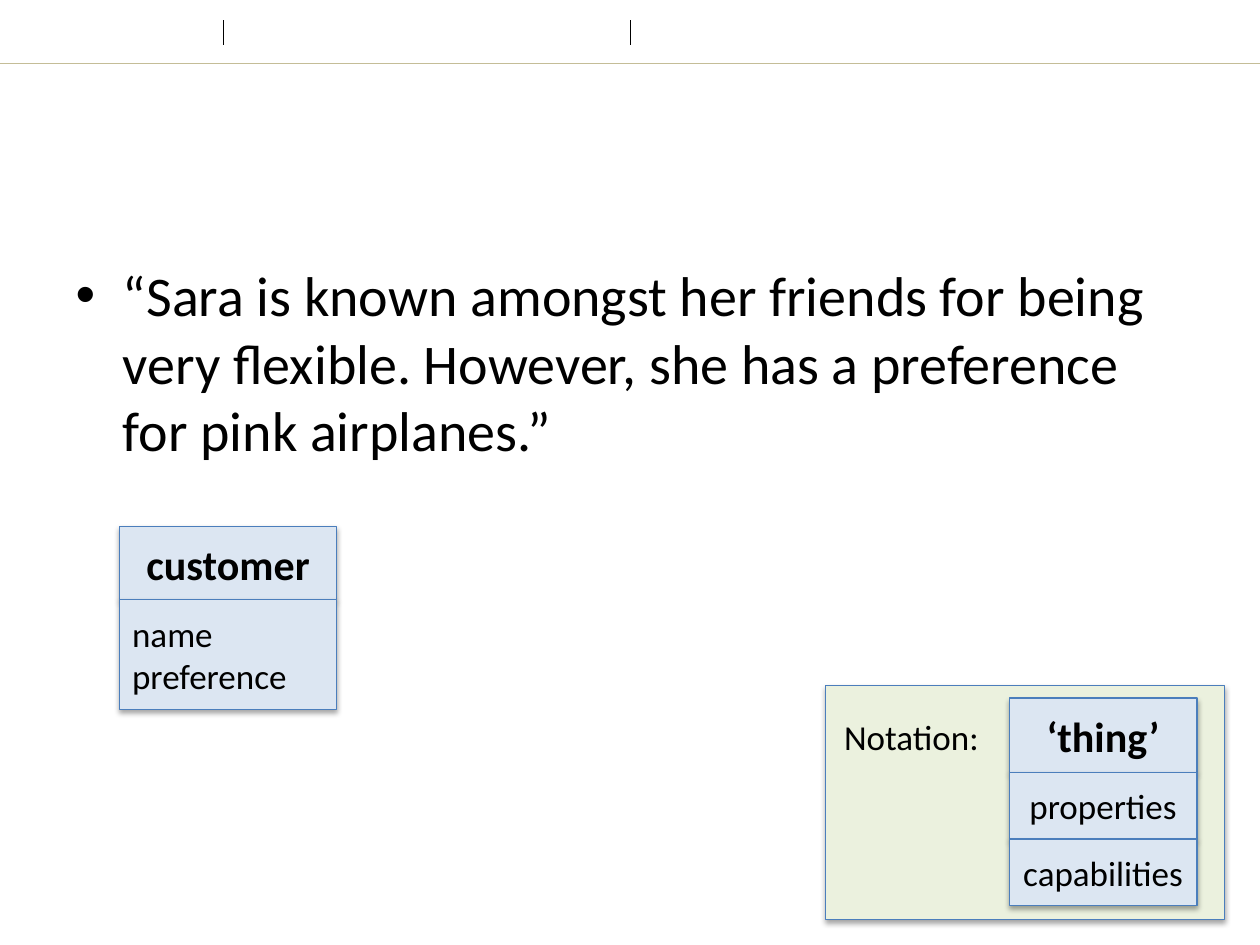
import pptx
import pptx.util
import pptx.dml.color
import pptx.enum.shapes
import pptx.enum.text
import pptx.oxml
import pptx.oxml.ns

Inches, Pt = pptx.util.Inches, pptx.util.Pt
ALIGN = pptx.enum.text.PP_ALIGN
WIDTH, HEIGHT = 10, 7.5
FONT = "Calibri"
COLORS = {"text": "000000", "class": "DCE6F2", "legend": "EBF1DE",
          "border": "4B7EBC", "rule": "C4BD97"}

QUOTE = ("“Sara is known amongst her friends for being very flexible. "
         "However, she has a preference for pink airplanes.”")
NOTATION = "Notation:"
# Each class box: left, top, width, then its compartments
# (lines, height, size, bold, alignment)
CLASSES = [
    (0.95, 4.18, 1.72, [
        (["customer"], 0.58, 24, True, ALIGN.CENTER),
        (["name", "preference"], 0.87, 20, False, ALIGN.LEFT)]),
    (8.01, 5.54, 1.49, [
        (["‘thing’"], 0.59, 24, True, ALIGN.CENTER),
        (["properties"], 0.53, 20, False, ALIGN.CENTER),
        (["capabilities"], 0.53, 20, False, ALIGN.CENTER)]),
]
LEGEND = (6.55, 5.44, 3.17, 1.86)
HEADER_Y = 0.5
TICKS_X = (1.77, WIDTH / 2)
TICK_TOP, TICK_BOTTOM = 0.16, 0.36


def rgb(name):
    return pptx.dml.color.RGBColor.from_string(COLORS[name])


def style(paragraph, size, bold=False):
    font = paragraph.font
    font.name, font.size, font.bold = FONT, Pt(size), bold
    font.color.rgb = rgb("text")


def add_rule(slide, x1, y1, x2, y2, color, weight):
    rule = slide.shapes.add_connector(
        pptx.enum.shapes.MSO_CONNECTOR.STRAIGHT, *map(Inches, (x1, y1, x2, y2)))
    rule.line.color.rgb, rule.line.width = rgb(color), Pt(weight)
    pptx.oxml.ns.qn("a:effectLst")
    rule._element.spPr.append(pptx.oxml.parse_xml(
        f'<a:effectLst {pptx.oxml.ns.nsdecls("a")}/>'))


def add_box(shapes, place, fill):
    """Add a bordered rectangle with a soft shadow below it."""
    box = shapes.add_shape(pptx.enum.shapes.MSO_SHAPE.RECTANGLE, *map(Inches, place))
    box.fill.solid()
    box.fill.fore_color.rgb = rgb(fill)
    box.line.color.rgb, box.line.width = rgb("border"), Pt(0.75)
    box.shadow.inherit = False
    effects = box._element.spPr.find(pptx.oxml.ns.qn("a:effectLst"))
    effects.append(pptx.oxml.parse_xml(
        f'<a:outerShdw {pptx.oxml.ns.nsdecls("a")} blurRad="{Pt(3.1)}" '
        f'dist="{Pt(1.8)}" dir="5400000" rotWithShape="0">'
        f'<a:srgbClr val="{COLORS["text"]}"><a:alpha val="35000"/></a:srgbClr>'
        '</a:outerShdw>'))
    return box


def add_class(slide, left, top, width, compartments):
    """Stack the compartments of one class box in a group."""
    group = slide.shapes.add_group_shape()
    for lines, height, size, bold, align in compartments:
        box = add_box(group.shapes, (left, top, width, height), "class")
        frame = box.text_frame
        frame.word_wrap = True
        frame.vertical_anchor = pptx.enum.text.MSO_ANCHOR.MIDDLE
        paragraph = frame.paragraphs[0]
        for index, line in enumerate(lines):
            if index:
                paragraph.add_line_break()
            paragraph.add_run().text = line
        paragraph.alignment = align
        style(paragraph, size, bold)
        top += height


def main():
    deck = pptx.Presentation()
    deck.slide_width, deck.slide_height = Inches(WIDTH), Inches(HEIGHT)
    slide = deck.slides.add_slide(deck.slide_layouts.get_by_name("Title and Content"))
    title = slide.shapes.title._element
    title.getparent().remove(title)

    add_rule(slide, 0, HEADER_Y, WIDTH, HEADER_Y, "rule", 0.25)
    for x in TICKS_X:
        add_rule(slide, x, TICK_TOP, x, TICK_BOTTOM, "text", 0.5)

    quote = slide.placeholders[1]
    quote.left, quote.top, quote.width, quote.height = map(Inches, (0.5, 2.02, 9, 1.84))
    quote.text_frame.text = QUOTE
    quote.text_frame.paragraphs[0].space_before = Pt(0)
    style(quote.text_frame.paragraphs[0], 32)

    customer, thing = CLASSES
    add_class(slide, *customer)
    add_box(slide.shapes, LEGEND, "legend")
    add_class(slide, *thing)

    notation = slide.shapes.add_textbox(*map(Inches, (6.6, 5.63, 1.28, 0.44))).text_frame
    notation.text = NOTATION
    notation.word_wrap = False
    notation.auto_size = pptx.enum.text.MSO_AUTO_SIZE.SHAPE_TO_FIT_TEXT
    style(notation.paragraphs[0], 20)

    deck.save("out.pptx")


if __name__ == "__main__":
    main()
